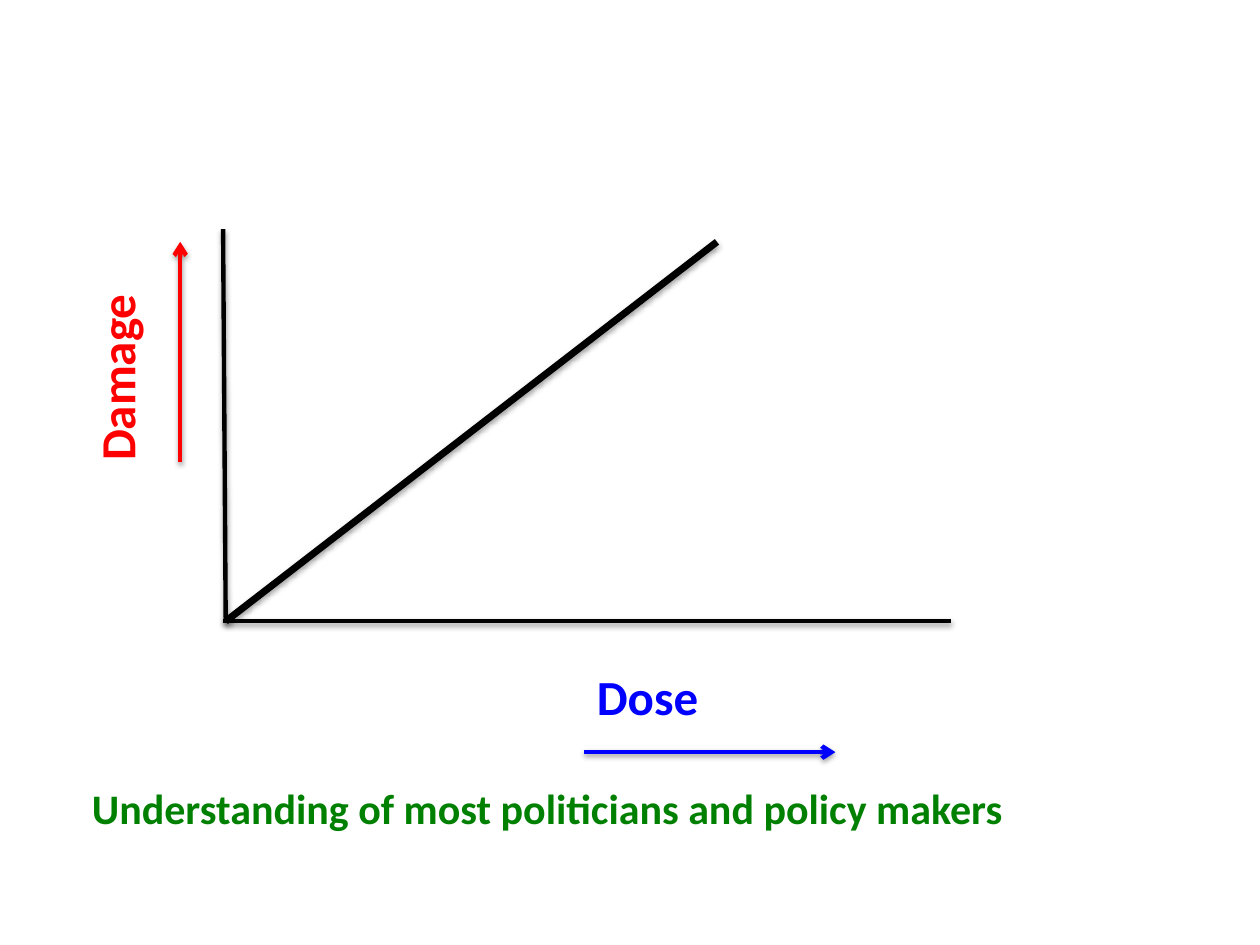
from lxml.etree import SubElement
from pptx import Presentation
from pptx.dml.color import RGBColor
from pptx.enum.shapes import MSO_CONNECTOR
from pptx.enum.text import MSO_AUTO_SIZE
from pptx.oxml.ns import qn
from pptx.util import Pt

BLACK = RGBColor(0x00, 0x00, 0x00)
BLUE = RGBColor(0x00, 0x00, 0xFF)
RED = RGBColor(0xFF, 0x00, 0x00)
GREEN = RGBColor(0x00, 0x80, 0x00)

AXIS_WIDTH = 2.5
TREND_WIDTH = 4
BASELINE = 355


def add_shadow(line):
    """Give the line a soft shadow that falls straight down."""
    effects = SubElement(line._element.spPr, qn("a:effectLst"))
    shadow = SubElement(effects, qn("a:outerShdw"), blurRad=str(Pt(3.1)),
                        dist=str(Pt(1.6)), dir="5400000", rotWithShape="0")
    shade = SubElement(shadow, qn("a:srgbClr"), val=str(BLACK))
    SubElement(shade, qn("a:alpha"), val="38000")


def add_line(shapes, start, end, color, width=AXIS_WIDTH):
    ends = [Pt(value) for value in (*start, *end)]
    line = shapes.add_connector(MSO_CONNECTOR.STRAIGHT, *ends)
    line.line.color.rgb = color
    line.line.width = Pt(width)
    add_shadow(line)
    return line


def add_arrow(shapes, start, end, color):
    arrow = add_line(shapes, start, end, color)
    SubElement(arrow.line._get_or_add_ln(), qn("a:tailEnd"), type="arrow")


def add_label(shapes, wording, left, top, width, height, size, color, rotation=0):
    label = shapes.add_textbox(Pt(left), Pt(top), Pt(width), Pt(height))
    label.rotation = rotation
    frame = label.text_frame
    frame.word_wrap = True
    frame.auto_size = MSO_AUTO_SIZE.SHAPE_TO_FIT_TEXT
    frame.text = wording
    font = frame.paragraphs[0].runs[0].font
    font.name = "Calibri"
    font.size = Pt(size)
    font.bold = True
    font.color.rgb = color


def add_dose_graph(shapes):
    origin = (129, BASELINE)
    add_line(shapes, (127.5, 131), origin, BLACK)
    add_line(shapes, (127.5, BASELINE), (543.6, BASELINE), BLACK)
    add_line(shapes, origin, (409.7, 138.2), BLACK, TREND_WIDTH)

    add_arrow(shapes, (334, 429.8), (477.4, 429.8), BLUE)
    add_label(shapes, "Dose", 334, 377.3, 144, 41, 28, BLUE)
    add_label(shapes, "Damage", -61.2, 122.4, 255, 41, 28, RED, rotation=270)
    add_arrow(shapes, (103, 264.2), (103, 138.2), RED)


def main():
    presentation = Presentation()
    presentation.slide_width = Pt(720)
    presentation.slide_height = Pt(540)
    slide = presentation.slides.add_slide(presentation.slide_layouts[6])

    add_dose_graph(slide.shapes.add_group_shape().shapes)
    add_label(slide.shapes, "Understanding of most politicians and policy makers",
              45.4, 443.5, 614, 36, 24, GREEN)
    presentation.save("out.pptx")


if __name__ == "__main__":
    main()
